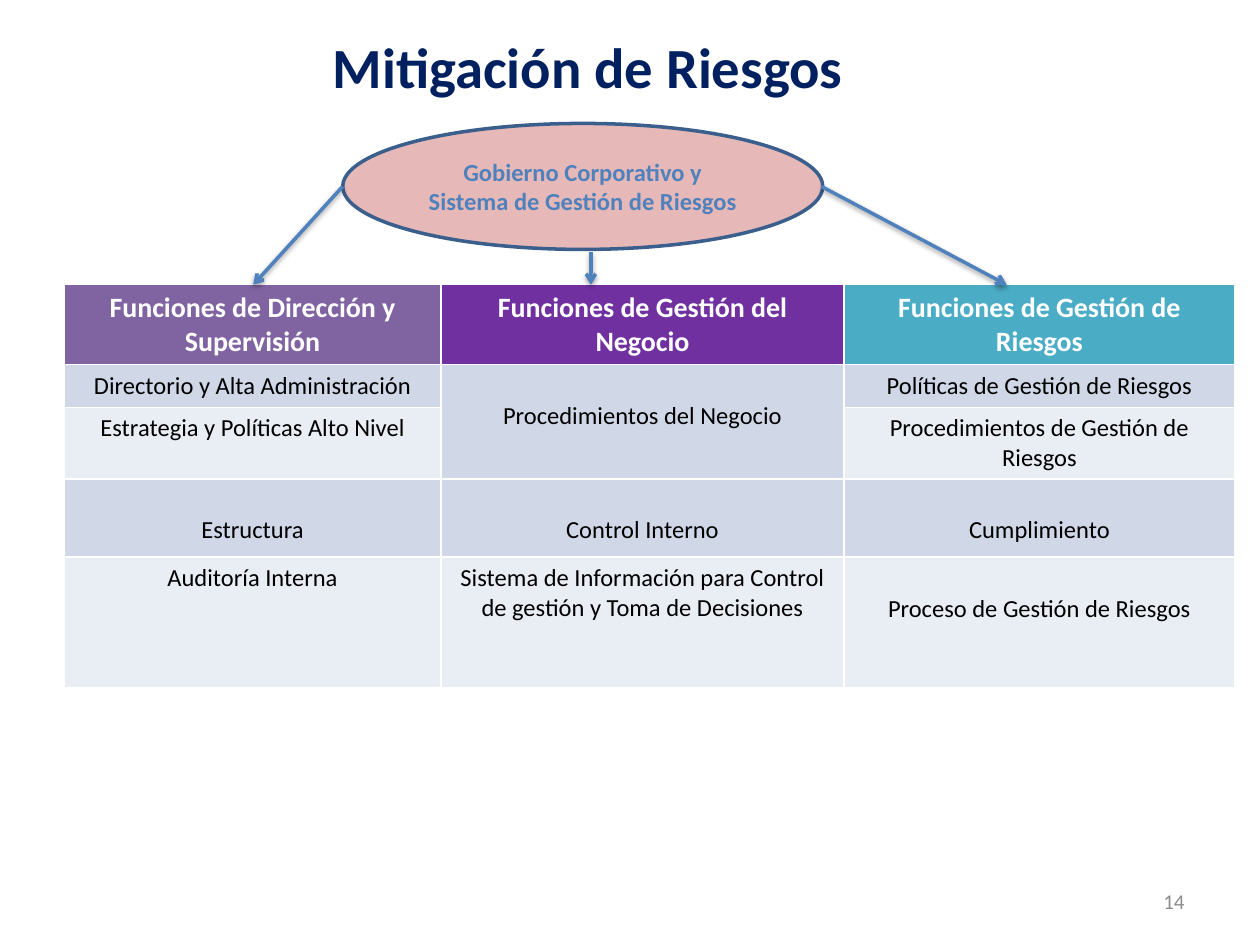
from lxml import etree
from pptx import Presentation
from pptx.dml.color import RGBColor
from pptx.enum.shapes import MSO_CONNECTOR as Conn, MSO_SHAPE as Geo
from pptx.enum.text import MSO_ANCHOR as Anchor, PP_ALIGN as Align
from pptx.oxml import parse_xml
from pptx.oxml.ns import nsdecls, qn
from pptx.util import Inches, Pt

HUES = {
    "navy": "002060", "blue": "4F81BD", "edge": "3A5F8C", "pink": "E6B9B8",
    "mauve": "8064A2", "violet": "7030A0", "teal": "4BACC6",
    "dark": "D0D8E8", "light": "E9EDF4",
    "white": "FFFFFF", "black": "000000", "gray": "8C8C8C",
}
SHADOW = (
    f'<a:effectLst {nsdecls("a")}>'
    '<a:outerShdw blurRad="40000" dist="20000" dir="5400000" rotWithShape="0">'
    '<a:srgbClr val="000000"><a:alpha val="38000"/></a:srgbClr>'
    '</a:outerShdw></a:effectLst>'
)


def hue(name):
    return RGBColor.from_string(HUES[name])


class Page:
    """Holds the style and the current slide."""

    font = "Calibri"

    def __init__(self, slide):
        self.slide = slide
        self.shapes = slide.shapes

    def label(self, frame, text, size, color, bold=False, align=Align.CENTER):
        frame.text = text
        frame.word_wrap = True
        for para in frame.paragraphs:
            para.alignment = align
            for run in para.runs:
                run.font.name = self.font
                run.font.size = Pt(size)
                run.font.bold = bold
                run.font.color.rgb = hue(color)

    def text(self, box, text, size, color, **style):
        frame = self.shapes.add_textbox(*map(Inches, box)).text_frame
        self.label(frame, text, size, color, **style)
        frame.vertical_anchor = Anchor.MIDDLE

    def oval(self, box, text, size, color, fill, edge):
        oval = self.shapes.add_shape(Geo.OVAL, *map(Inches, box))
        oval.shadow.inherit = False
        oval.fill.solid()
        oval.fill.fore_color.rgb = hue(fill)
        oval.line.color.rgb = hue(edge)
        oval.line.width = Pt(2)
        self.label(oval.text_frame, text, size, color, bold=True)
        oval.text_frame.vertical_anchor = Anchor.MIDDLE

    def arrow(self, start, end, color):
        ends = map(Inches, (*start, *end))
        arrow = self.shapes.add_connector(Conn.STRAIGHT, *ends)
        arrow.line.color.rgb = hue(color)
        arrow.line.width = Pt(2)
        props = arrow._element.spPr
        etree.SubElement(props.find(qn("a:ln")), qn("a:tailEnd"), type="arrow")
        props.append(parse_xml(SHADOW))

    def cell(self, cell, text, size, color, fill, bold=False, top=0.05):
        cell.fill.solid()
        cell.fill.fore_color.rgb = hue(fill)
        cell.margin_top = Inches(top)
        self.label(cell.text_frame, text, size, color, bold=bold)

    def table(self, left, top, widths, heights):
        box = (left, top, sum(widths), sum(heights))
        table = self.shapes.add_table(
            len(heights), len(widths), *map(Inches, box)).table
        table.horz_banding = False
        for col, width in zip(table.columns, widths):
            col.width = Inches(width)
        for row, height in zip(table.rows, heights):
            row.height = Inches(height)
        return table


HEADS = [
    ("Funciones de Dirección y Supervisión", "mauve"),
    ("Funciones de Gestión del Negocio", "violet"),
    ("Funciones de Gestión de Riesgos", "teal"),
]
ROWS = [
    ("Directorio y Alta Administración", "Procedimientos del Negocio",
     "Políticas de Gestión de Riesgos"),
    ("Estrategia y Políticas Alto Nivel", None,
     "Procedimientos de Gestión de Riesgos"),
    ("Estructura", "Control Interno", "Cumplimiento"),
    ("Auditoría Interna",
     "Sistema de Información para Control de gestión y Toma de Decisiones",
     "Proceso de Gestión de Riesgos"),
]
# Cells whose text starts one line lower
LOW = {(1, 1), (3, 0), (3, 1), (3, 2), (4, 2)}


def main():
    deck = Presentation()
    deck.slide_width, deck.slide_height = Inches(10), Inches(7.5)
    page = Page(deck.slides.add_slide(deck.slide_layouts[6]))

    # Title
    page.text((0.5, 0.21, 8.33, 0.63), "Mitigación de Riesgos", 32.4, "navy",
              bold=True)

    # Table of functions
    top = 2.26
    table = page.table(0.51, top, [2.99, 3.2, 3.1],
                       [0.63, 0.34, 0.57, 0.62, 1.04])
    table.cell(1, 1).merge(table.cell(2, 1))
    for col, (text, fill) in enumerate(HEADS):
        page.cell(table.cell(0, col), text, 16, "white", fill, bold=True)
    for row, texts in enumerate(ROWS, 1):
        fill = "dark" if row % 2 else "light"
        for col, text in enumerate(texts):
            if text:
                drop = 0.29 if (row, col) in LOW else 0.05
                page.cell(table.cell(row, col), text, 14, "black", fill,
                          top=drop)

    # Governance oval and its arrows
    page.oval((2.72, 0.98, 3.81, 1),
              "Gobierno Corporativo y Sistema de Gestión de Riesgos",
              14, "blue", "pink", "edge")
    for start, end in [((2.72, 1.48), 2.01), ((6.52, 1.48), 7.99),
                       ((4.69, 2), 4.69)]:
        page.arrow(start, (end, top), "blue")

    # Page number
    page.text((7.17, 6.95, 2.33, 0.4), "14", 12, "gray", align=Align.RIGHT)

    deck.save("out.pptx")


if __name__ == "__main__":
    main()
